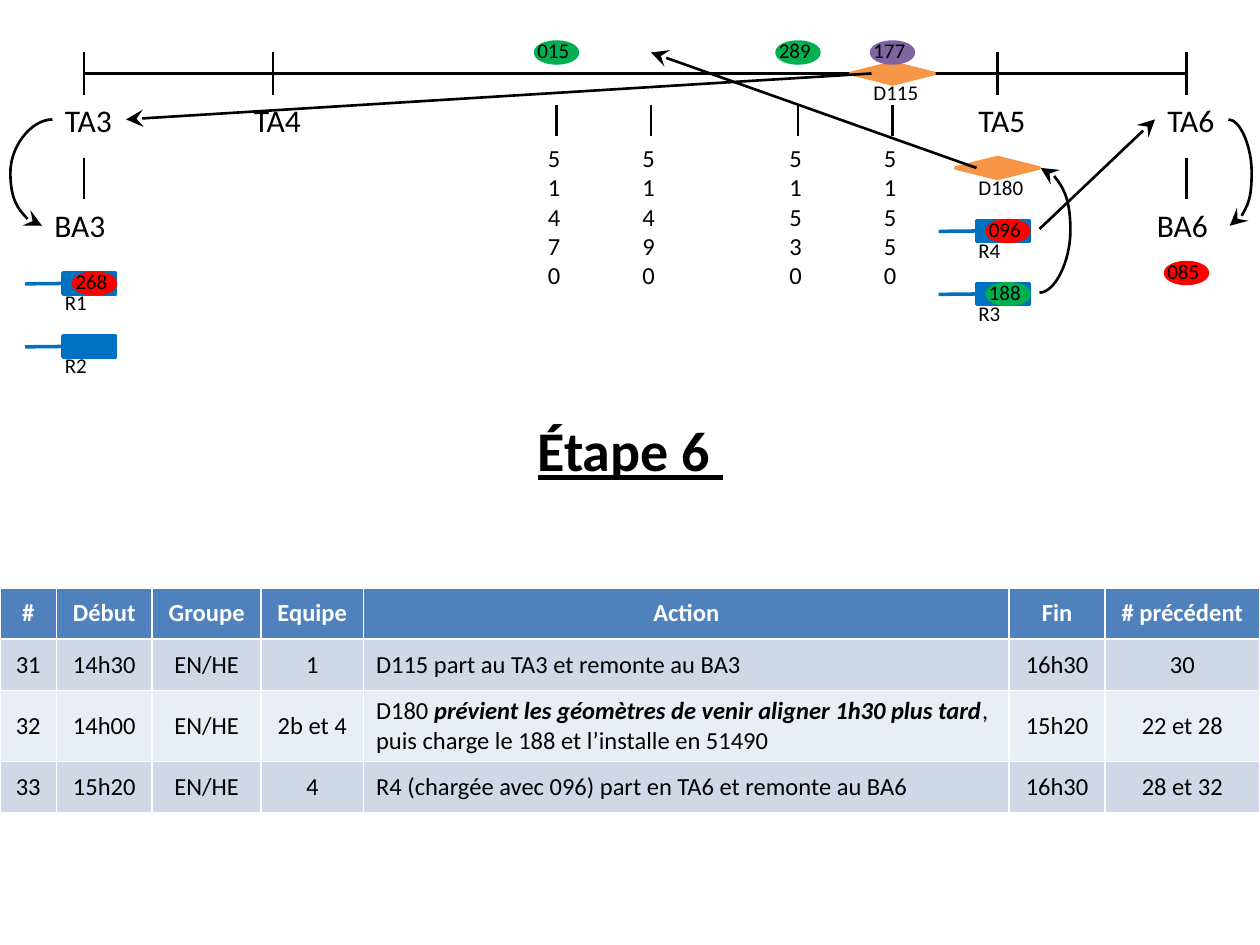
from lxml import etree
from pptx import Presentation
from pptx.dml.color import RGBColor
from pptx.enum.shapes import MSO_CONNECTOR, MSO_SHAPE
from pptx.enum.text import MSO_ANCHOR, PP_ALIGN
from pptx.oxml.ns import qn
from pptx.util import Pt

PX = 9525
FONT = "Calibri"
BLACK = RGBColor(0x00, 0x00, 0x00)
WHITE = RGBColor(0xFF, 0xFF, 0xFF)
ORANGE = RGBColor(0xF7, 0x96, 0x46)
BLUE = RGBColor(0x00, 0x70, 0xC0)
GREEN = RGBColor(0x00, 0xB0, 0x50)
RED = RGBColor(0xFF, 0x00, 0x00)
PURPLE = RGBColor(0x80, 0x64, 0xA2)
HEADER = RGBColor(0x4F, 0x81, 0xBD)
BANDS = RGBColor(0xD0, 0xD8, 0xE8), RGBColor(0xE9, 0xED, 0xF4)

COLUMNS = [43, 73, 83, 78, 492, 73, 118]
ACTION = 4
ROWS = [
    ["#", "Début", "Groupe", "Equipe", "Action", "Fin", "# précédent"],
    ["31", "14h30", "EN/HE", "1", "D115 part au TA3 et remonte au BA3", "16h30", "30"],
    ["32", "14h00", "EN/HE", "2b et 4",
     ["D180 ", "prévient les géomètres de venir aligner 1h30 plus tard",
      ", puis charge le 188 et l’installe en 51490"], "15h20", "22 et 28"],
    ["33", "15h20", "EN/HE", "4", "R4 (chargée avec 096) part en TA6 et remonte au BA6",
     "16h30", "28 et 32"],
]


def style(r, size, color=BLACK, bold=False):
    r.font.name, r.font.size, r.font.bold = FONT, Pt(size), bold
    r.font.color.rgb = color


def label(s, x, y, w, h, text, size):
    sp = s.shapes.add_textbox(x * PX, y * PX, w * PX, h * PX)
    tf = sp.text_frame
    tf.word_wrap = True
    tf.text = text
    style(tf.paragraphs[0].runs[0], size)
    return sp


def block(s, kind, x, y, w, h, color):
    sp = s.shapes.add_shape(kind, x * PX, y * PX, w * PX, h * PX)
    sp.shadow.inherit = False
    sp.fill.solid()
    sp.fill.fore_color.rgb = color
    sp.line.color.rgb = color
    sp.line.width = Pt(2)
    return sp


def line(s, x1, y1, x2, y2, arrow=False, kind=MSO_CONNECTOR.STRAIGHT):
    c = s.shapes.add_connector(kind, x1 * PX, y1 * PX, x2 * PX, y2 * PX)
    c.line.color.rgb = BLACK
    c.line.width = Pt(1.5)
    if arrow:
        etree.SubElement(c.line._get_or_add_ln(), qn("a:tailEnd"),
                         type="stealth", w="lg", len="lg")
    etree.SubElement(c._element.spPr, qn("a:effectLst"))
    return c


def curve(s, x1, y1, x2, y2, bend_x):
    """Curved arrow that swings out to bend_x between its two ends."""
    c = line(s, x1, y1, x2, y2, True, MSO_CONNECTOR.CURVE)
    bend = round((bend_x - x1) / (x2 - x1) * 100000)
    geom = c._element.spPr.find(qn("a:prstGeom"))
    guides = geom.find(qn("a:avLst"))
    if guides is None:
        guides = etree.SubElement(geom, qn("a:avLst"))
    etree.SubElement(guides, qn("a:gd"), name="adj1", fmla=f"val {bend}")


def station(s, x, y, name):
    line(s, x, y, x, y + 32)
    return label(s, x - 24, y + 32, 56, 38, name, 18)


def base(s, x, y, name):
    line(s, x, y, x, y + 32)
    label(s, x - 32, y + 32, 64, 38, name, 18)


def marker(s, x, y, number):
    line(s, x, y, x, y + 24)
    label(s, x - 16, y + 24, 24, 123, number, 14)


def engine(s, x, y, name):
    block(s, MSO_SHAPE.FLOWCHART_DECISION, x, y, 64, 16, ORANGE)
    label(s, x + 8, y + 8, 64, 29, name, 12)


def crane(s, x, y, name):
    sp = block(s, MSO_SHAPE.LINE_CALLOUT_1, x, y, 40, 16, BLUE)
    for i, value in enumerate([0.5, -0.01, 0.52, -0.72]):
        sp.adjustments[i] = value
    label(s, x - 8, y + 8, 40, 29, name, 12)


def badge(s, x, y, number, color):
    block(s, MSO_SHAPE.OVAL, x, y, 32, 16, color)
    return label(s, x - 8, y - 8, 48, 29, number, 12)


def network(s, x, y):
    line(s, x, y + 16, x + 840, y + 16)
    stations = {name: station(s, x + dx, y, name)
                for name, dx in [("TA3", 0), ("TA4", 144), ("TA5", 696), ("TA6", 840)]}
    for name, dx in [("BA3", 0), ("BA6", 840)]:
        base(s, x + dx, y + 80, name)
    for number, dx in [("51470", 360), ("51490", 432), ("51530", 544), ("51550", 616)]:
        marker(s, x + dx, y + 40, number)
    for name, dx, dy in [("D180", 664, 80), ("D115", 584, 8)]:
        engine(s, x + dx, y + dy, name)
    for name, dx, dy in [("R1", -16, 168), ("R2", -16, 216),
                         ("R3", 680, 176), ("R4", 680, 128)]:
        crane(s, x + dx, y + dy, name)
    badges = {number: badge(s, x + dx, y + dy, number, color)
              for number, dx, dy, color in [
                  ("015", 344, -8, GREEN), ("289", 528, -8, GREEN),
                  ("177", 600, -8, PURPLE), ("268", -8, 168, RED),
                  ("188", 688, 176, GREEN), ("096", 688, 128, RED),
                  ("085", 824, 160, RED)]}

    line(s, x + 600, y + 16, x + 32, y + 51, True).end_connect(stations["TA3"], 3)
    line(s, x + 680, y + 88, x + 432, y, True)
    c = line(s, x + 728, y + 135, x + 816, y + 51, True)
    c.begin_connect(badges["096"], 3)
    c.end_connect(stations["TA6"], 1)
    curve(s, x + 728, y + 183, x + 729, y + 88, x + 752)
    curve(s, x - 24, y + 51, x - 32, y + 132, x - 56)
    curve(s, x + 872, y + 51, x + 873, y + 132, x + 890)


def step_title(s, x, y, w, h):
    sp = s.shapes.title
    sp.left, sp.top, sp.width, sp.height = (v * PX for v in (x, y, w, h))
    tf = sp.text_frame
    tf.text = "Étape 6 "
    tf.vertical_anchor = MSO_ANCHOR.TOP
    p = tf.paragraphs[0]
    p.alignment = PP_ALIGN.LEFT
    r = p.runs[0]
    style(r, 32, bold=True)
    r.font.underline = True


def schedule(s, x, y, w, row_h):
    table = s.shapes.add_table(len(ROWS), len(COLUMNS), x * PX, y * PX,
                               w * PX, row_h * len(ROWS) * PX).table
    for column, width in zip(table.columns, COLUMNS):
        column.width = width * PX
    for i, row in enumerate(ROWS):
        for j, content in enumerate(row):
            cell = table.cell(i, j)
            cell.fill.solid()
            cell.fill.fore_color.rgb = BANDS[(i - 1) % 2] if i else HEADER
            cell.vertical_anchor = MSO_ANCHOR.MIDDLE
            p = cell.text_frame.paragraphs[0]
            p.alignment = PP_ALIGN.LEFT if i and j == ACTION else PP_ALIGN.CENTER
            parts = content if isinstance(content, list) else [content]
            for k, part in enumerate(parts):
                r = p.add_run()
                r.text = part
                style(r, 14, BLACK if i else WHITE, bold=i == 0 or k == 1)
                r.font.italic = k == 1


def main():
    prs = Presentation()
    prs.slide_width, prs.slide_height = 960 * PX, 720 * PX
    s = prs.slides.add_slide(prs.slide_layouts[5])
    network(s, 64, 40)
    step_title(s, 400, 312, 216, 61)
    schedule(s, 0, 448, 960, 39)
    prs.save("out.pptx")


if __name__ == "__main__":
    main()
